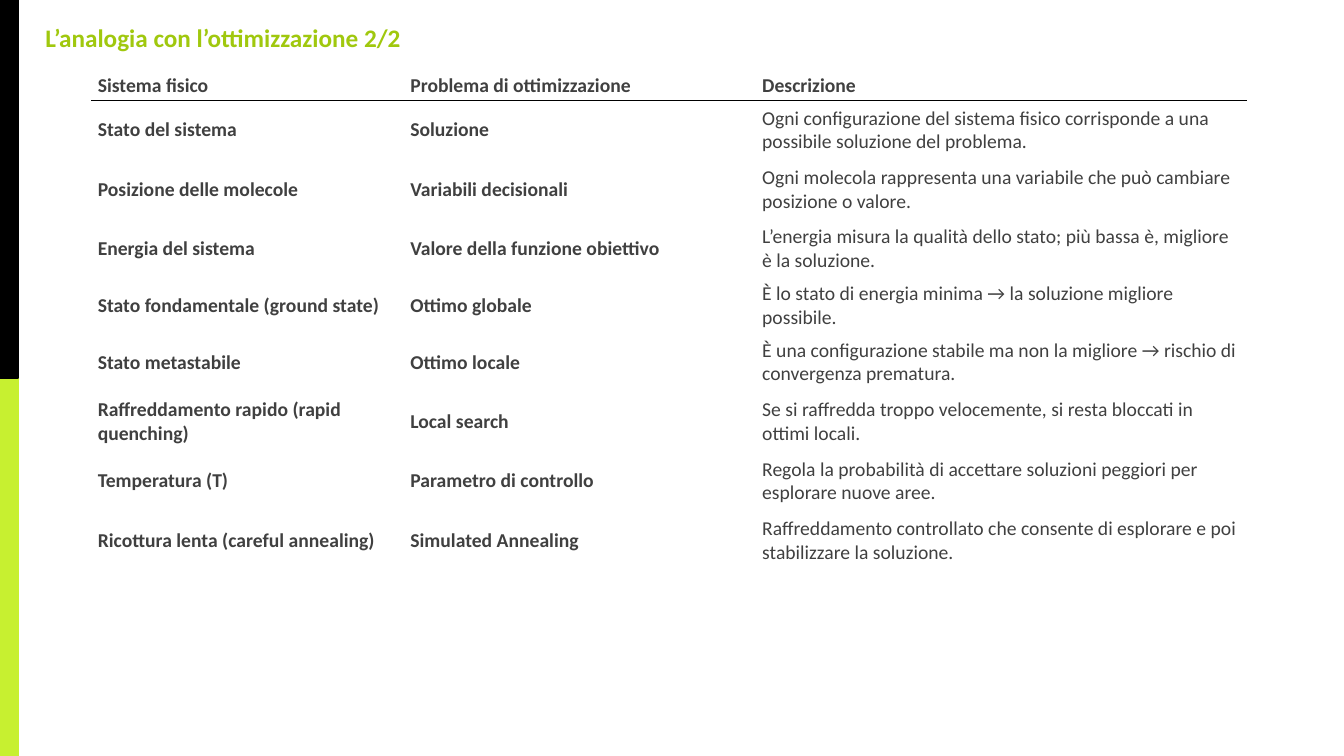
from lxml import etree
from pptx import Presentation
from pptx.dml.color import RGBColor
from pptx.enum.shapes import MSO_SHAPE
from pptx.enum.text import MSO_ANCHOR, MSO_AUTO_SIZE, PP_ALIGN
from pptx.oxml.ns import qn
from pptx.util import Inches, Pt

RECTANGLE = MSO_SHAPE.RECTANGLE
MIDDLE = MSO_ANCHOR.MIDDLE
NO_AUTOFIT = MSO_AUTO_SIZE.NONE
LEFT = PP_ALIGN.LEFT

BLACK = RGBColor(0x00, 0x00, 0x00)
LIME = RGBColor(0xC7, 0xF0, 0x30)
GREEN = RGBColor(0xA0, 0xC8, 0x0E)
GRAY = RGBColor(0x40, 0x40, 0x40)

SLIDE_WIDTH, SLIDE_HEIGHT = 13.33, 7.5
TITLE_ONLY_LAYOUT = 5
COLUMN_WIDTHS = [3.1, 3.49, 4.86]
HEADER_HEIGHT, ROW_HEIGHT, SHORT_ROW_HEIGHT = 0.23, 0.59, 0.41
SHORT_ROW = 4

ANALOGIES = [
    ("Sistema fisico", "Problema di ottimizzazione", "Descrizione"),
    ("Stato del sistema", "Soluzione",
     "Ogni configurazione del sistema fisico corrisponde a una possibile soluzione del problema."),
    ("Posizione delle molecole", "Variabili decisionali",
     "Ogni molecola rappresenta una variabile che può cambiare posizione o valore."),
    ("Energia del sistema", "Valore della funzione obiettivo",
     "L’energia misura la qualità dello stato; più bassa è, migliore è la soluzione."),
    ("Stato fondamentale (ground state)", "Ottimo globale",
     "È lo stato di energia minima → la soluzione migliore possibile."),
    ("Stato metastabile", "Ottimo locale",
     "È una configurazione stabile ma non la migliore → rischio di convergenza prematura."),
    ("Raffreddamento rapido (rapid quenching)", "Local search",
     "Se si raffredda troppo velocemente, si resta bloccati in ottimi locali."),
    ("Temperatura (T)", "Parametro di controllo",
     "Regola la probabilità di accettare soluzioni peggiori per esplorare nuove aree."),
    ("Ricottura lenta (careful annealing)", "Simulated Annealing",
     "Raffreddamento controllato che consente di esplorare e poi stabilizzare la soluzione."),
]


class SlideBuilder:
    font_name = "Calibri"
    title_size = Pt(18)
    table_size = Pt(14)

    def __init__(self, slide):
        self.slide = slide

    def style(self, paragraph, size, color, bold):
        paragraph.alignment = LEFT
        font = paragraph.font
        font.name, font.size, font.bold = self.font_name, size, bold
        font.color.rgb = color

    def title(self, text, left, top, width, height):
        title = self.slide.shapes.title
        title.left, title.top = Inches(left), Inches(top)
        title.width, title.height = Inches(width), Inches(height)
        frame = title.text_frame
        frame.text = text
        frame.auto_size = NO_AUTOFIT
        frame.vertical_anchor = MIDDLE
        self.style(frame.paragraphs[0], self.title_size, GREEN, True)

    def side_bar(self, top_share, color):
        """Draw a bar down half of the left edge, starting at a share of the slide height."""
        bar = self.slide.shapes.add_shape(
            RECTANGLE, 0, Inches(top_share * SLIDE_HEIGHT),
            Inches(0.18), Inches(SLIDE_HEIGHT / 2))
        bar.shadow.inherit = False
        bar.fill.solid()
        bar.fill.fore_color.rgb = color
        bar.line.color.rgb = color
        bar.line.width = Pt(1.5)

    def table(self, rows, left, top, column_widths, row_heights):
        table = self.slide.shapes.add_table(
            len(rows), len(column_widths), Inches(left), Inches(top),
            Inches(sum(column_widths)), Inches(sum(row_heights))).table
        table.first_row = table.horz_banding = False
        for column, width in zip(table.columns, column_widths):
            column.width = Inches(width)
        for row, height in zip(table.rows, row_heights):
            row.height = Inches(height)
        description_column = len(column_widths) - 1
        for r, texts in enumerate(rows):
            for c, text in enumerate(texts):
                cell = table.cell(r, c)
                self.cell(cell, text, bold=r == 0 or c < description_column)
                if r < 2:
                    self.rule(cell, "a:lnB" if r == 0 else "a:lnT")

    def cell(self, cell, text, bold):
        cell.text = text
        cell.fill.background()
        cell.vertical_anchor = MIDDLE
        cell.margin_left = cell.margin_right = Inches(0.06)
        cell.margin_top = cell.margin_bottom = Inches(0.03)
        self.style(cell.text_frame.paragraphs[0], self.table_size, GRAY, bold)

    def rule(self, cell, side):
        """Add a black border on one side; borders must precede the fill in the XML."""
        border = etree.Element(qn(side), w=str(Pt(1)))
        fill = etree.SubElement(border, qn("a:solidFill"))
        etree.SubElement(fill, qn("a:srgbClr"), val=str(BLACK))
        cell._tc.get_or_add_tcPr().insert(0, border)


def main():
    presentation = Presentation()
    presentation.slide_width = Inches(SLIDE_WIDTH)
    presentation.slide_height = Inches(SLIDE_HEIGHT)
    layout = presentation.slide_layouts[TITLE_ONLY_LAYOUT]
    builder = SlideBuilder(presentation.slides.add_slide(layout))

    builder.title("L’analogia con l’ottimizzazione 2/2", 0.35, 0.17, 8.66, 0.4)
    builder.side_bar(0.5, LIME)
    builder.side_bar(0, BLACK)

    row_heights = [HEADER_HEIGHT] + [ROW_HEIGHT] * (len(ANALOGIES) - 1)
    row_heights[SHORT_ROW] = SHORT_ROW_HEIGHT
    builder.table(ANALOGIES, 0.91, 0.7, COLUMN_WIDTHS, row_heights)

    presentation.save("out.pptx")


if __name__ == "__main__":
    main()
